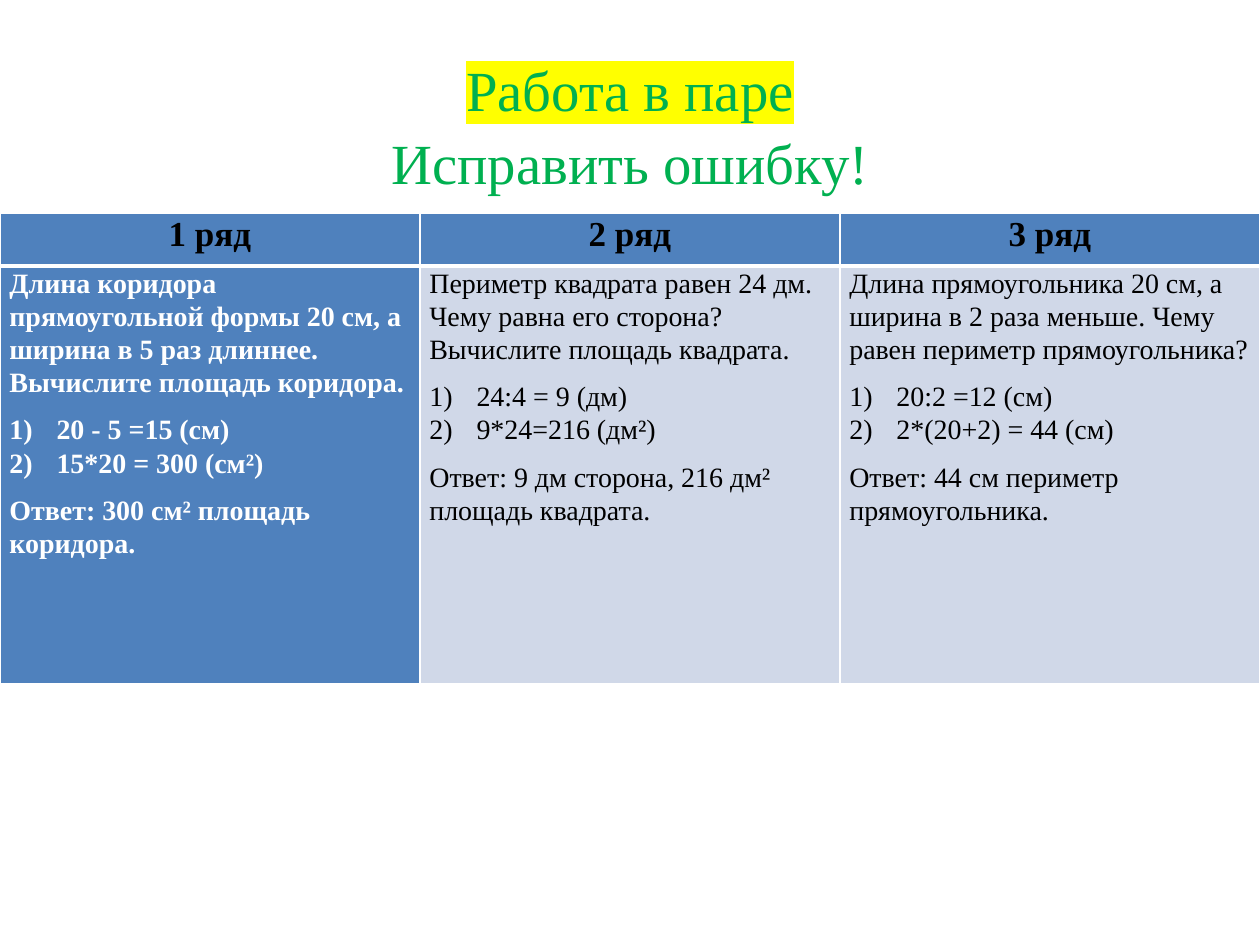
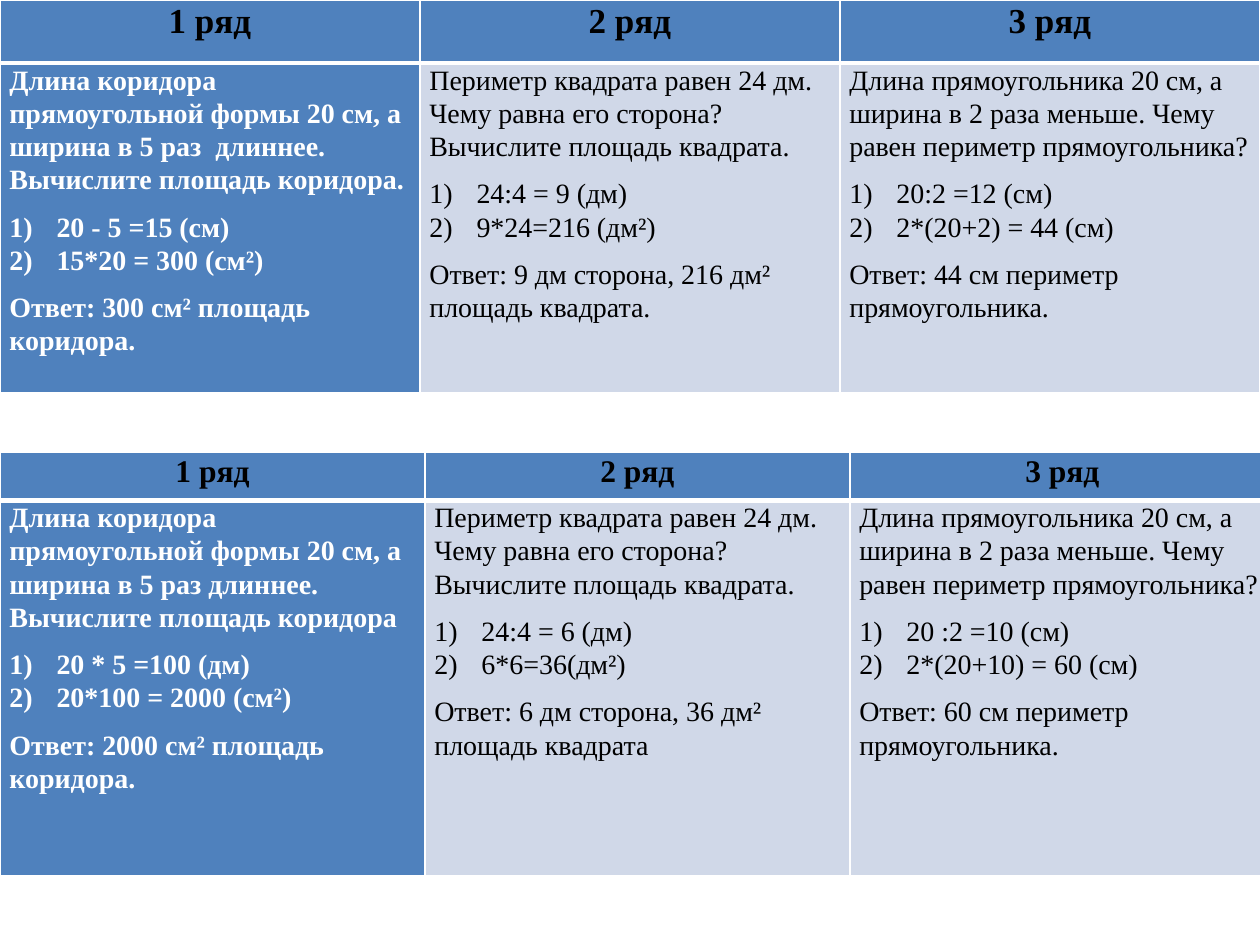
from dataclasses import dataclass

from lxml import etree
from pptx import Presentation
from pptx.dml.color import RGBColor
from pptx.enum.text import MSO_ANCHOR, MSO_AUTO_SIZE, PP_ALIGN
from pptx.oxml.ns import qn
from pptx.util import Cm, Pt

LEFT, CENTER = PP_ALIGN.LEFT, PP_ALIGN.CENTER
MIDDLE = MSO_ANCHOR.MIDDLE
NO_AUTOFIT = MSO_AUTO_SIZE.NONE
TITLE_ONLY, BLANK = 5, 6
PAGE_WIDTH, PAGE_HEIGHT = 25.4, 19.05


@dataclass(frozen=True)
class Theme:
    font: str = "Times New Roman"
    title: str = "00B050"
    highlight: str = "FFFF00"
    accent: str = "4F81BD"
    pale: str = "D0D8E8"
    dark: str = "000000"
    light: str = "FFFFFF"
    title_size: float = 32.4
    header_size: float = 20
    small_header_size: float = 18
    body_size: float = 16
    thin: float = 1
    thick: float = 3
    title_spacing: float = 1.08
    line_spacing: float = 1.07
    space_after: float = 8


THEME = Theme()

# Task wording: one question, two steps and one answer for each row of desks
HEADERS = ("1 ряд", "2 ряд", "3 ряд")
CORRIDOR = "Длина коридора прямоугольной формы 20 см, а ширина в 5 раз длиннее. Вычислите площадь коридора."
SQUARE = "Периметр квадрата равен 24 дм. Чему равна его сторона? Вычислите площадь квадрата."
RECTANGLE = "Длина прямоугольника 20 см, а ширина в 2 раза меньше. Чему равен периметр прямоугольника?"

WRONG = (
    (CORRIDOR, ("20 - 5 =15 (см)", "15*20 = 300 (см²)"), "Ответ: 300 см² площадь коридора."),
    (SQUARE, ("24:4 = 9 (дм)", "9*24=216 (дм²)"), "Ответ: 9 дм сторона, 216 дм² площадь квадрата."),
    (RECTANGLE, ("20:2 =12 (см)", "2*(20+2) = 44 (см)"), "Ответ: 44 см периметр прямоугольника."),
)
WRONG_SPACED = ((CORRIDOR.replace("раз длиннее", "раз  длиннее"), *WRONG[0][1:]), *WRONG[1:])
CORRECT = (
    (CORRIDOR.rstrip("."), ("20 * 5 =100 (дм)", "20*100 = 2000 (см²)"), "Ответ: 2000 см² площадь коридора."),
    (SQUARE, ("24:4 = 6 (дм)", "6*6=36(дм²)"), "Ответ: 6 дм сторона, 36 дм² площадь квадрата"),
    (RECTANGLE, ("20 :2 =10 (см)", "2*(20+10) = 60 (см)"), "Ответ: 60 см периметр прямоугольника."),
)


def write(para, text, *, size, color, bold=False, align=LEFT, spacing=THEME.line_spacing,
          after=THEME.space_after, highlight=None, numbered=False):
    """Fill a paragraph with one formatted span."""
    para.alignment = align
    para.line_spacing = spacing
    para.space_before = Pt(0)
    para.space_after = Pt(after)
    span = para.add_run()
    span.text = text
    font = span.font
    font.name, font.size, font.bold = THEME.font, Pt(size), bold
    font.color.rgb = RGBColor.from_string(color)
    if highlight:
        mark = etree.Element(qn("a:highlight"))
        etree.SubElement(mark, qn("a:srgbClr"), val=highlight)
        span.font._element.find(qn("a:latin")).addprevious(mark)
    if numbered:
        properties = para._p.get_or_add_pPr()
        properties.set("marL", str(Cm(0.95)))
        properties.set("indent", str(-Cm(0.95)))
        etree.SubElement(properties, qn("a:buFont"), typeface="+mj-lt")
        etree.SubElement(properties, qn("a:buAutoNum"), type="arabicParenR")


class Builder:
    def __init__(self, theme):
        self.theme = theme
        self.deck = Presentation()
        self.deck.slide_width = Cm(PAGE_WIDTH)
        self.deck.slide_height = Cm(PAGE_HEIGHT)
        self.page = None

    def add_page(self, layout):
        self.page = self.deck.slides.add_slide(self.deck.slide_layouts[layout])

    def add_title(self, marked_line, plain_line):
        theme = self.theme
        box = self.page.shapes.title
        box.left, box.top, box.width, box.height = Cm(1.27), Cm(2.03), Cm(22.86), Cm(0.89)
        frame = box.text_frame
        frame.auto_size = NO_AUTOFIT
        frame.vertical_anchor = MIDDLE
        style = dict(size=theme.title_size, color=theme.title, align=CENTER,
                     spacing=theme.title_spacing, after=0)
        write(frame.paragraphs[0], marked_line, highlight=theme.highlight, **style)
        write(frame.add_paragraph(), plain_line, **style)

    def style_cell(self, cell, fill, top, bottom):
        cell.margin_left = cell.margin_right = Cm(0.19)
        cell.margin_top = cell.margin_bottom = 0
        properties = cell._tc.get_or_add_tcPr()
        thin = self.theme.thin
        for side, width in (("L", thin), ("R", thin), ("T", top), ("B", bottom)):
            line = etree.SubElement(properties, qn(f"a:ln{side}"), w=str(Pt(width)))
            paint = etree.SubElement(line, qn("a:solidFill"))
            etree.SubElement(paint, qn("a:srgbClr"), val=self.theme.light)
        cell.fill.solid()
        cell.fill.fore_color.rgb = RGBColor.from_string(fill)

    def fill_task(self, cell, task, color, bold):
        question, steps, answer = task
        frame = cell.text_frame
        style = dict(size=self.theme.body_size, color=color, bold=bold)
        write(frame.paragraphs[0], question, **style)
        for step in steps:
            after = self.theme.space_after if step == steps[-1] else 0
            write(frame.add_paragraph(), step, numbered=True, after=after, **style)
        write(frame.add_paragraph(), answer, **style)

    def add_task_table(self, tasks, top, heights, header_size, width=PAGE_WIDTH):
        theme = self.theme
        table = self.page.shapes.add_table(
            2, len(HEADERS), 0, Cm(top), Cm(width), Cm(sum(heights))).table
        table.horz_banding = False
        for row, height in zip(table.rows, heights):
            row.height = Cm(height)
        for column, (header, task) in enumerate(zip(HEADERS, tasks)):
            # Header row
            cell = table.cell(0, column)
            self.style_cell(cell, theme.accent, theme.thin, theme.thick)
            write(cell.text_frame.paragraphs[0], header, size=header_size,
                  color=theme.dark, bold=True, align=CENTER)
            # Task row, with the first column emphasised
            first = column == 0
            cell = table.cell(1, column)
            self.style_cell(cell, theme.accent if first else theme.pale, theme.thick, theme.thin)
            self.fill_task(cell, task, theme.light if first else theme.dark, first)


def main():
    builder = Builder(THEME)

    # Slide 1: find the mistakes
    builder.add_page(TITLE_ONLY)
    builder.add_title("Работа в паре", "Исправить ошибку!")
    builder.add_task_table(WRONG, 4.29, (1.07, 8.43), THEME.header_size)

    # Slide 2: mistakes above, corrected solutions below
    builder.add_page(BLANK)
    builder.add_task_table(CORRECT, 9.12, (0.97, 7.57), THEME.small_header_size, width=25.7)
    builder.add_task_table(WRONG_SPACED, 0, (1.27, 6.65), THEME.header_size)

    builder.deck.save("out.pptx")


if __name__ == "__main__":
    main()
